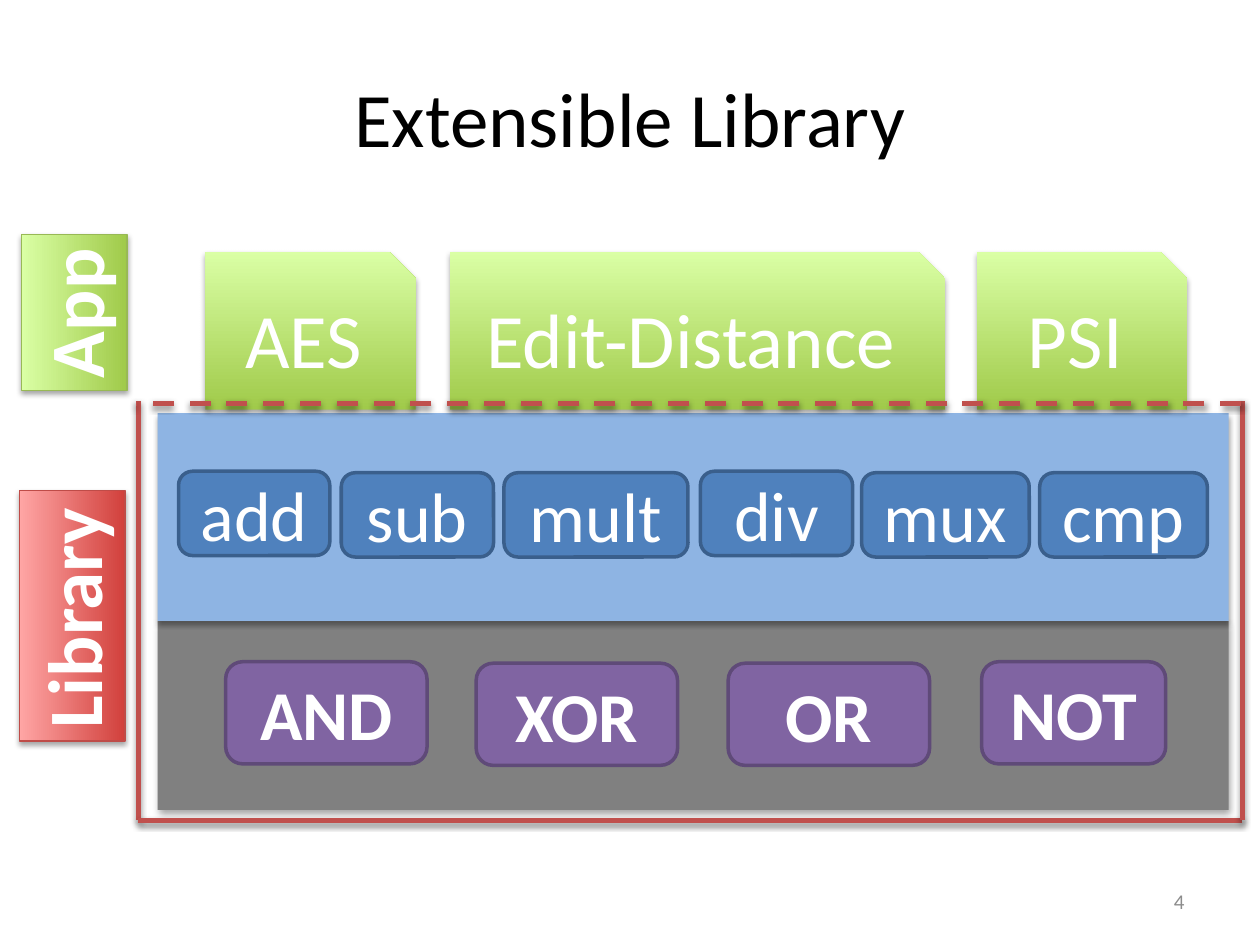
"""Build the Extensible Library slide: applications on top of library layers."""
from dataclasses import dataclass
from typing import Optional

from lxml.etree import SubElement
from pptx import Presentation
from pptx.dml.color import RGBColor
from pptx.enum.dml import MSO_LINE_DASH_STYLE as Dash
from pptx.enum.shapes import MSO_CONNECTOR as Connector, MSO_SHAPE as Shape
from pptx.enum.text import MSO_ANCHOR as Anchor, MSO_AUTO_SIZE as AutoSize, PP_ALIGN as Align
from pptx.oxml.ns import qn
from pptx.util import Cm, Pt

FONT = "Calibri"
WHITE = "FFFFFF"
RED = "C0504D"
GREENS = ("A0CA4A", "DAFFA5")
REDS = ("D1403C", "FFA6A5")


@dataclass(frozen=True)
class Style:
    kind: Shape
    fills: tuple
    line: Optional[str] = None
    line_width: float = 2
    shadow: bool = False
    size: int = 40
    bold: bool = False


@dataclass(frozen=True)
class Block:
    text: str
    left: float
    top: float
    width: float
    height: float


@dataclass(frozen=True)
class Edge:
    start: tuple
    end: tuple
    dashed: bool = False


GATE = Style(Shape.ROUNDED_RECTANGLE, ("8064A2",), "5F4A78", bold=True)
OPERATION = Style(Shape.ROUNDED_RECTANGLE, ("4F81BD",), "3A5F8C")
GATE_LAYER = Style(Shape.RECTANGLE, ("808080",), shadow=True)
OPERATION_LAYER = Style(Shape.RECTANGLE, ("8EB4E3",), shadow=True)
APPLICATION = Style(Shape.SNIP_1_RECTANGLE, GREENS, shadow=True, size=44)
LIBRARY_LABEL = Style(Shape.RECTANGLE, REDS, "BF4C48", 0.75, True, 44, True)
APP_LABEL = Style(Shape.RECTANGLE, GREENS, "98B955", 0.75, True, 44, True)

GATES = [
    Block("AND", 4.55, 13.34, 4.06, 2.06),
    Block("XOR", 9.6, 13.37, 4.06, 2.06),
    Block("OR", 14.68, 13.37, 4.06, 2.06),
    Block("NOT", 19.79, 13.34, 3.71, 2.06),
]
OPERATIONS = [
    Block("add", 3.6, 9.5, 3.05, 1.7),
    Block("sub", 6.88, 9.53, 3.07, 1.7),
    Block("mult", 10.16, 9.53, 3.71, 1.7),
    Block("div", 14.12, 9.5, 3.07, 1.7),
    Block("mux", 17.37, 9.53, 3.38, 1.7),
    Block("cmp", 20.96, 9.53, 3.38, 1.7),
]
APPLICATIONS = [
    Block("AES", 4.14, 5.08, 4.24, 3.18),
    Block("Edit-Distance", 9.07, 5.08, 9.98, 3.18),
    Block("PSI", 19.69, 5.08, 4.24, 3.18),
]
FRAME = [
    Edge((2.79, 8.08), (2.79, 16.54)),
    Edge((25.04, 16.54), (2.79, 16.54)),
    Edge((25.04, 8.08), (25.04, 16.54)),
    Edge((25.02, 8.13), (2.74, 8.13), dashed=True),
]


def color(value: str) -> RGBColor:
    """Turn a hex string into a colour."""
    return RGBColor.from_string(value)


def place(shape, left: float, top: float, width: float, height: float) -> None:
    """Set position and size in centimetres."""
    shape.left, shape.top = Cm(left), Cm(top)
    shape.width, shape.height = Cm(width), Cm(height)


def write(shape, text: str, size: int, value: str, bold: bool = False,
          align: Align = Align.CENTER, anchor: Anchor = Anchor.MIDDLE) -> None:
    """Write one formatted paragraph into a shape."""
    frame = shape.text_frame
    frame.text = text
    frame.vertical_anchor = anchor
    paragraph = frame.paragraphs[0]
    paragraph.alignment = align
    font = paragraph.runs[0].font
    font.name, font.size, font.bold = FONT, Pt(size), bold
    font.color.rgb = color(value)


def add_shadow(effects, distance: int, opacity: int) -> None:
    """Add a soft downward shadow to an effect list."""
    shadow = SubElement(effects, qn("a:outerShdw"), blurRad="40000", dist=str(distance),
                        dir="5400000", rotWithShape="0")
    black = SubElement(shadow, qn("a:srgbClr"), val="000000")
    SubElement(black, qn("a:alpha"), val=str(opacity * 1000))


def add_block(shapes, block: Block, style: Style):
    """Draw a styled block with its text."""
    shape = shapes.add_shape(style.kind, 0, 0, 0, 0)
    place(shape, block.left, block.top, block.width, block.height)
    if len(style.fills) == 1:
        shape.fill.solid()
        shape.fill.fore_color.rgb = color(style.fills[0])
    else:
        shape.fill.gradient()
        shape.fill.gradient_angle = 90
        for stop, value in zip(shape.fill.gradient_stops, style.fills):
            stop.color.rgb = color(value)
    if style.line:
        shape.line.color.rgb = color(style.line)
        shape.line.width = Pt(style.line_width)
    else:
        shape.line.fill.background()
    shape.shadow.inherit = False
    if style.shadow:
        add_shadow(shape._element.spPr.find(qn("a:effectLst")), 23000, 35)
    if block.text:
        write(shape, block.text, style.size, WHITE, style.bold)
    return shape


def add_layer(slide, layer: Block, layer_style: Style, blocks: list, style: Style) -> None:
    """Draw a library layer grouped with its blocks."""
    group = slide.shapes.add_group_shape()
    add_block(group.shapes, layer, layer_style)
    for block in blocks:
        add_block(group.shapes, block, style)


def add_label(slide, block: Block, style: Style) -> None:
    """Draw a label that reads upwards."""
    shape = add_block(slide.shapes, block, style)
    shape.rotation = 270
    frame = shape.text_frame
    frame.word_wrap = False
    frame.auto_size = AutoSize.SHAPE_TO_FIT_TEXT
    frame.vertical_anchor = Anchor.TOP
    frame.paragraphs[0].alignment = Align.LEFT


def add_edge(shapes, edge: Edge) -> None:
    """Draw one side of the library frame."""
    ends = [Cm(value) for value in edge.start + edge.end]
    connector = shapes.add_connector(Connector.STRAIGHT, *ends)
    connector.line.color.rgb = color(RED)
    connector.line.width = Pt(3)
    if edge.dashed:
        connector.line.dash_style = Dash.DASH
    add_shadow(SubElement(connector._element.spPr, qn("a:effectLst")), 20000, 38)


def main() -> None:
    """Build and save the presentation."""
    presentation = Presentation()
    presentation.slide_width, presentation.slide_height = Cm(25.4), Cm(19.05)
    slide = presentation.slides.add_slide(presentation.slide_layouts[5])
    title = slide.shapes.title
    place(title, 1.27, 0.76, 22.86, 3.18)
    write(title, "Extensible Library", 44, "000000")
    number = slide.shapes.add_textbox(Cm(18.2), Cm(17.66), Cm(5.93), Cm(1.01))
    number.text_frame.word_wrap = True
    write(number, "4", 12, "8C8C8C", align=Align.RIGHT)

    add_layer(slide, Block("", 3.18, 12.52, 21.59, 3.81), GATE_LAYER, GATES, GATE)
    add_layer(slide, Block("", 3.18, 8.33, 21.59, 4.19), OPERATION_LAYER, OPERATIONS, OPERATION)
    for application in APPLICATIONS:
        add_block(slide.shapes, application, APPLICATION)
    frame = slide.shapes.add_group_shape()
    for edge in FRAME:
        add_edge(frame.shapes, edge)
    add_label(slide, Block("Library", -1.07, 11.35, 5.05, 2.13), LIBRARY_LABEL)
    add_label(slide, Block("App", -0.08, 5.23, 3.15, 2.13), APP_LABEL)
    presentation.save("out.pptx")


if __name__ == "__main__":
    main()
